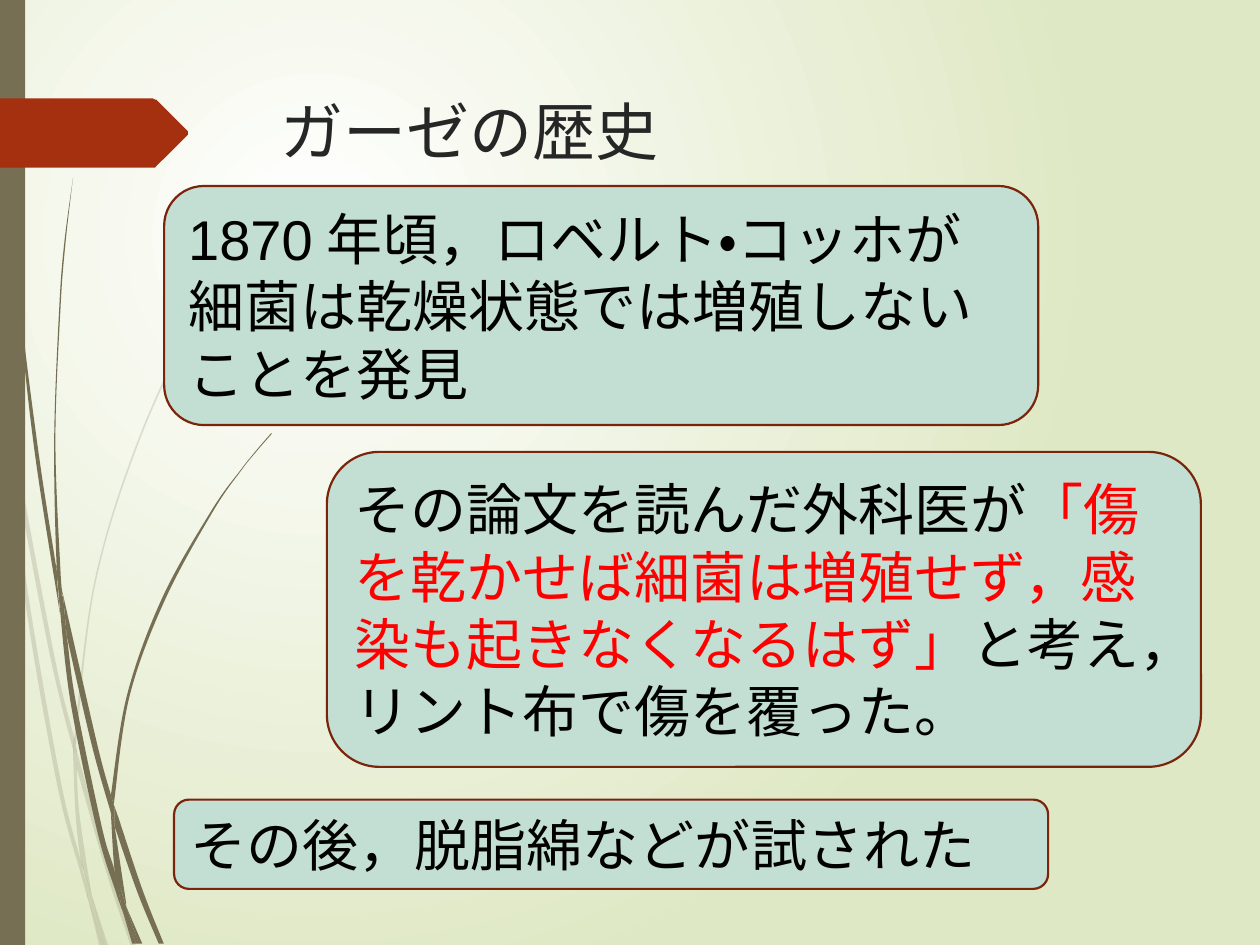
from dataclasses import dataclass

from lxml.etree import SubElement
from pptx import Presentation
from pptx.dml.color import RGBColor
from pptx.enum.lang import MSO_LANGUAGE_ID as Language
from pptx.enum.shapes import MSO_SHAPE as Shape
from pptx.enum.text import MSO_ANCHOR as Anchor, PP_ALIGN as Align
from pptx.oxml.ns import qn
from pptx.util import Cm, Pt


@dataclass(frozen=True)
class Theme:
    white: str = "FFFFFF"
    edge: str = "DFE8C4"
    olive: str = "766F54"
    rust: str = "A53010"
    panel: str = "C3DED3"
    outline: str = "7A240C"
    title: str = "262626"
    body: str = "000000"
    accent: str = "FF0000"
    title_font: str = "TeX Gyre Adventor"
    body_font: str = "Arial"
    title_size: int = 36
    body_size: int = 32


THEME = Theme()
GRID = Cm(2.54) / 100  # drawing unit of the outlines below

# Each outline is a list of smooth edges, joined by straight lines
PALE_GRASS = [
    ([(8, 350), (6, 322), (0, 282)], [(0, 299), (7, 344), (8, 350)]),
    ([(59, 586), (43, 520), (10, 345)], [(12, 376), (40, 522), (59, 599)]),
    ([(61, 610), (85, 694), (104, 751)], [(108, 751), (88, 692), (64, 607), (61, 596)]),
    ([(83, 751), (86, 751)], [(73, 711)]),
    ([(69, 707), (64, 683), (48, 619), (22, 469), (12, 376), (8, 350)],
     [(8, 350), (19, 470), (45, 621), (64, 693), (70, 714)]),
    ([(58, 599), (60, 646), (64, 683), (67, 692), (73, 711)],
     [(72, 706), (63, 646), (61, 610), (61, 608)]),
    ([(61, 596), (61, 584), (76, 462), (111, 349), (159, 245), (187, 198), (201, 175), (217, 154)],
     [(217, 153), (201, 175), (186, 197), (158, 244), (110, 348), (75, 461), (59, 584), (59, 586)]),
    ([(70, 714)], [(79, 751), (82, 751)]),
    ([(61, 608), (61, 610)], [(61, 596), (59, 586), (58, 599)]),
    ([(65, 683), (69, 707), (70, 714), (82, 751)], [(83, 751), (73, 711), (67, 692)]),
]
DARK_GRASS = [
    ([(2, 0), (3, 48), (5, 110), (14, 233), (27, 355), (46, 477), (47, 481)],
     [(45, 457), (45, 453), (30, 355), (15, 232), (6, 109), (4, 48), (3, 0)]),
    ([(88, 633), (88, 631), (77, 590), (50, 472)], [(53, 505), (73, 592), (88, 645)]),
    ([(91, 656), (109, 708), (126, 749)], [(130, 749), (113, 706), (94, 649), (91, 641)]),
    ([(96, 717), (91, 691), (81, 657), (60, 556), (53, 505), (47, 477)],
     [(47, 477), (56, 557), (77, 659), (92, 708), (97, 722)]),
    ([(50, 472), (48, 453), (44, 349), (48, 245), (52, 193), (58, 141)],
     [(58, 141), (51, 193), (47, 245), (43, 349), (45, 449), (49, 472)]),
    ([(110, 749), (113, 749)], [(100, 719)]),
    ([(47, 477), (53, 505)], [(50, 472), (49, 472), (45, 449), (45, 453)]),
    ([(91, 641), (91, 633), (103, 552), (131, 476), (169, 406), (191, 374), (203, 359), (216, 344)],
     [(215, 344), (203, 358), (191, 373), (168, 405), (129, 474), (101, 551), (88, 631)]),
    ([(97, 722)], [(105, 749), (108, 749)]),
    ([(88, 645), (91, 691), (96, 706), (100, 719)], [(100, 716), (91, 656), (90, 651)]),
    ([(88, 645), (90, 651), (91, 656)], [(91, 641), (88, 631), (88, 633)]),
    ([(91, 691), (96, 717), (97, 722), (108, 749)], [(110, 749), (100, 719), (96, 706)]),
]
ARROW = ([(149, 104), (149, 107)], [(124, 132), (123, 133), (121, 133)], [(111, 133)],
         [(0, 133)], [(0, 78)], [(111, 78)], [(121, 78), (123, 79), (124, 79)])


def color(value):
    return RGBColor.from_string(value)


def paint(shape, fill, line=None, alpha=None):
    shape.shadow.inherit = False
    shape.fill.solid()
    shape.fill.fore_color.rgb = color(fill)
    if alpha is not None:
        value = shape.fill._xPr.find(".//" + qn("a:srgbClr"))
        SubElement(value, qn("a:alpha"), val=str(alpha * 1000))
    if line:
        shape.line.color.rgb = color(line)
        shape.line.width = Pt(1.25)
    else:
        shape.line.fill.background()


def add_text(paragraph, text, *, font, size, fill):
    run = paragraph.add_run()
    run.text = text
    run.font.name = font
    run.font.size = Pt(size)
    run.font.color.rgb = color(fill)
    run.font.language_id = Language.JAPANESE


def edge_handles(nodes):
    """Return the two curve handles for each step along an edge."""
    padded = [nodes[0], *nodes, nodes[-1]]
    return [
        (tuple(q + (r - p) / 6 for p, q, r in zip(a, b, c)),
         tuple(r - (s - q) / 6 for q, r, s in zip(b, c, d)))
        for a, b, c, d in zip(padded, padded[1:], padded[2:], padded[3:])]


def add_outline(shapes, edges, **look):
    first, *rest = [(x * GRID, y * GRID) for edge in edges for x, y in edge]
    builder = shapes.build_freeform(*first)
    builder.add_line_segments(rest, close=True)
    shape = builder.convert_to_shape()
    paint(shape, **look)

    # Bend the steps within an edge; the joins between edges stay straight
    handles = [pair for edge in edges for pair in [None, *edge_handles(edge)]][1:]
    for step, pair in zip(list(shape._element.iter(qn("a:lnTo"))), handles):
        if pair:
            step.tag = qn("a:cubicBezTo")
            for index, (x, y) in enumerate(pair):
                SubElement(step, qn("a:pt"), x=str(round(x * GRID - shape.left)),
                           y=str(round(y * GRID - shape.top)))
                step.insert(index, step[-1])


def add_background(slide):
    fill = slide.background.fill
    fill.gradient()
    for stop, position, value in zip(fill.gradient_stops, (0, 1), (THEME.white, THEME.edge)):
        stop.position = position
        stop.color.rgb = color(value)
    gradient = slide.element.find(".//" + qn("a:gradFill"))
    gradient.remove(gradient.find(qn("a:lin")))
    circle = SubElement(gradient, qn("a:path"), path="circle")
    SubElement(circle, qn("a:fillToRect"), l="50000", t="50000", r="100000", b="100000")


def add_grass(slide, pieces, alpha=None):
    group = slide.shapes.add_group_shape()
    for edges in pieces:
        add_outline(group.shapes, edges, fill=THEME.olive, alpha=alpha)


def add_side_bar(slide, left, top, width, height):
    bar = slide.shapes.add_shape(Shape.RECTANGLE, left, top, width, height)
    paint(bar, THEME.olive)


def add_title(slide, left, top, width, height, text):
    frame = slide.shapes.add_textbox(left, top, width, height).text_frame
    frame.word_wrap = True
    add_text(frame.paragraphs[0], text, font=THEME.title_font,
             size=THEME.title_size, fill=THEME.title)


def add_panel(slide, left, top, width, height, parts):
    panel = slide.shapes.add_shape(Shape.FLOWCHART_ALTERNATE_PROCESS, left, top, width, height)
    paint(panel, THEME.panel, THEME.outline)
    frame = panel.text_frame
    frame.word_wrap = True
    frame.vertical_anchor = Anchor.MIDDLE
    paragraph = frame.paragraphs[0]
    paragraph.alignment = Align.LEFT
    for text, fill in parts:
        add_text(paragraph, text, font=THEME.body_font, size=THEME.body_size, fill=fill)


def main():
    presentation = Presentation()
    presentation.slide_width, presentation.slide_height = Cm(25.4), Cm(19.05)
    slide = presentation.slides.add_slide(presentation.slide_layouts[6])

    # Backdrop and decoration
    add_background(slide)
    add_grass(slide, PALE_GRASS, alpha=20)
    add_grass(slide, DARK_GRASS)
    add_side_bar(slide, 0, 0, Cm(0.51), presentation.slide_height)
    add_outline(slide.shapes, ARROW, fill=THEME.rust)

    # Title and the three steps of the story
    add_title(slide, Cm(5.41), Cm(1.74), Cm(18.31), Cm(3.56), "ガーゼの歴史")
    panels = [
        (3.31, 3.75, 4.82, [
            ("1870年頃，ロベルト・コッホが細菌は乾燥状態では増殖しないことを発見", THEME.body)]),
        (6.59, 9.11, 6.35, [
            ("その論文を読んだ外科医が", THEME.body),
            ("「傷を乾かせば細菌は増殖せず，感染も起きなくなるはず」", THEME.accent),
            ("と考え，リント布で傷を覆った。", THEME.body)]),
        (3.51, 16.12, 1.8, [("その後，脱脂綿などが試された", THEME.body)]),
    ]
    for left, top, height, parts in panels:
        add_panel(slide, Cm(left), Cm(top), Cm(17.62), Cm(height), parts)

    presentation.save("out.pptx")


if __name__ == "__main__":
    main()
